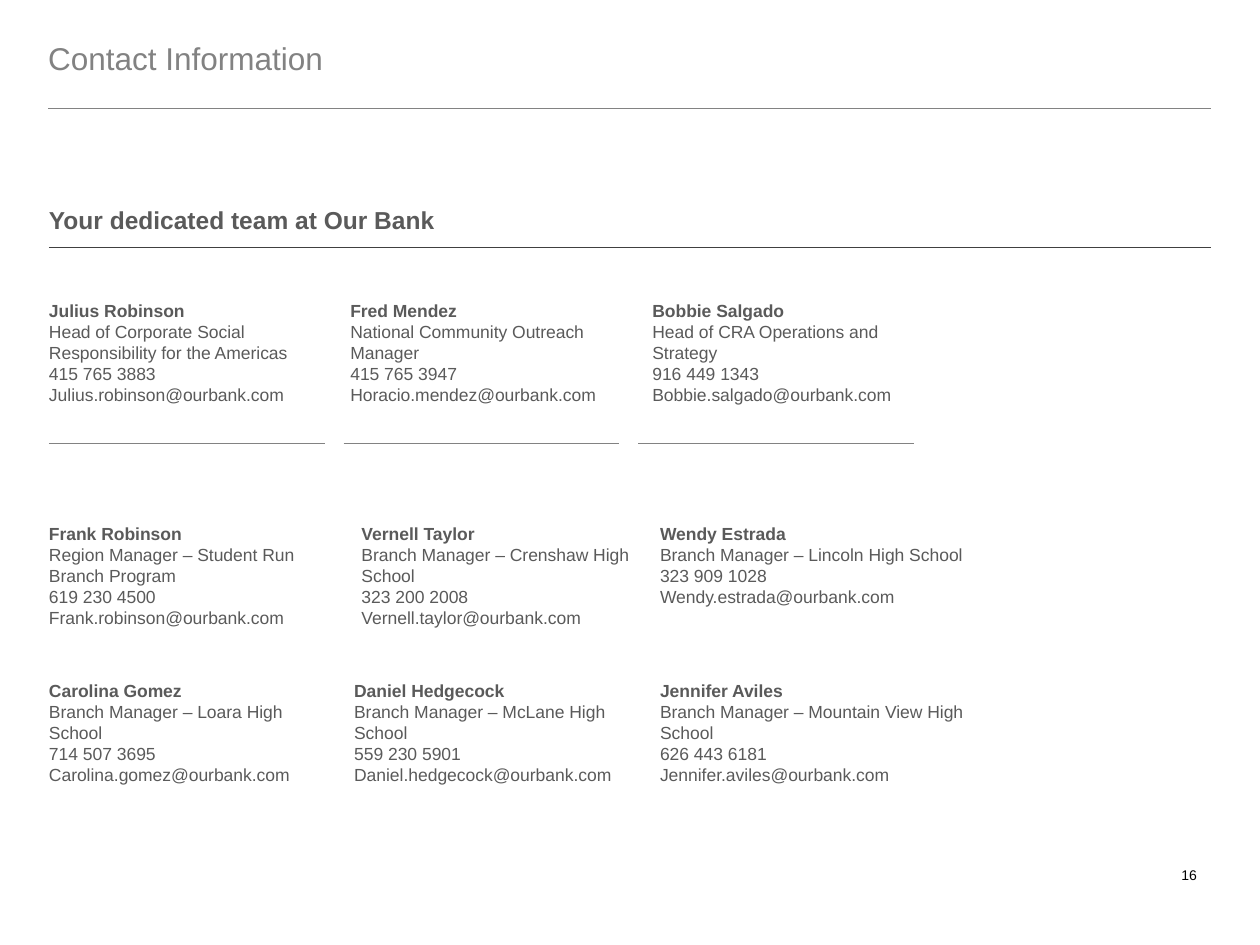
from lxml import etree
from pptx import Presentation
from pptx.dml.color import RGBColor
from pptx.enum.shapes import MSO_CONNECTOR
from pptx.enum.text import MSO_ANCHOR, PP_ALIGN
from pptx.oxml.ns import qn
from pptx.util import Pt

STRAIGHT = MSO_CONNECTOR.STRAIGHT
TOP, MIDDLE = MSO_ANCHOR.TOP, MSO_ANCHOR.MIDDLE
LEFT, RIGHT = PP_ALIGN.LEFT, PP_ALIGN.RIGHT

GREY = RGBColor(0x82, 0x82, 0x82)
DARK = RGBColor(0x5A, 0x5A, 0x5A)
INK = RGBColor(0x40, 0x40, 0x40)
BLACK = RGBColor(0, 0, 0)

TITLE = "Contact Information"
HEADING = "Your dedicated team at Our Bank"
NUMBER = "16"
DOMAIN = "@ourbank.com"

# Each row: top, height, column (left, width) pairs, people
TEAM = [
    (171.4, 67.7, [(28, 161.3), (200.2, 161.3), (372.8, 167.8)], [
        ("Julius Robinson", "Head of Corporate Social Responsibility for the Americas",
         "415 765 3883", "Julius.robinson"),
        ("Fred Mendez", "National Community Outreach Manager",
         "415 765 3947", "Horacio.mendez"),
        ("Bobbie Salgado", "Head of CRA Operations and Strategy",
         "916 449 1343", "Bobbie.salgado"),
    ]),
    (298.8, 74.2, [(28, 167.8), (206.6, 167.8), (377.2, 175.7)], [
        ("Frank Robinson", "Region Manager – Student Run Branch Program",
         "619 230 4500", "Frank.robinson"),
        ("Vernell Taylor", "Branch Manager – Crenshaw High School",
         "323 200 2008", "Vernell.taylor"),
        ("Wendy Estrada", "Branch Manager – Lincoln High School",
         "323 909 1028", "Wendy.estrada"),
    ]),
    (388.8, 74.2, [(28, 163.4), (202.4, 163.4), (377.2, 175.7)], [
        ("Carolina Gomez", "Branch Manager – Loara High School",
         "714 507 3695", "Carolina.gomez"),
        ("Daniel Hedgecock", "Branch Manager – McLane High School",
         "559 230 5901", "Daniel.hedgecock"),
        ("Jennifer Aviles", "Branch Manager – Mountain View High School",
         "626 443 6181", "Jennifer.aviles"),
    ]),
]
EDGE, END = 28, 692
RULE_Y, RULE_W, RULE_STEP = 253.4, 157.7, 168.3


def add_text(slide, lines, x, y, w, h, size=10, color=DARK, bold=0,
             align=LEFT, anchor=TOP, space=None, wrap=True):
    """Add a text box whose first `bold` lines are bold."""
    frame = slide.shapes.add_textbox(Pt(x), Pt(y), Pt(w), Pt(h)).text_frame
    frame.margin_left = frame.margin_right = 0
    frame.margin_top = frame.margin_bottom = 0
    frame.word_wrap = wrap
    frame.vertical_anchor = anchor
    for i, line in enumerate(lines):
        para = frame.paragraphs[0] if i == 0 else frame.add_paragraph()
        para.alignment = align
        if space:
            para.line_spacing = Pt(space)
        run = para.add_run()
        run.text = line
        font = run.font
        font.name, font.size, font.bold = "Arial", Pt(size), i < bold
        font.color.rgb = color


def add_rule(slide, x, y, end, color=GREY, width=0.5):
    rule = slide.shapes.add_connector(STRAIGHT, Pt(x), Pt(y), Pt(end), Pt(y))
    rule.line.color.rgb = color
    rule.line.width = Pt(width)
    etree.SubElement(rule._element.spPr, qn("a:effectLst"))


def main():
    deck = Presentation()
    deck.slide_width, deck.slide_height = Pt(720), Pt(540)
    slide = deck.slides.add_slide(deck.slide_layouts[6])

    add_rule(slide, 27.5, 62, END, width=0.25)
    add_text(slide, [TITLE], 27.5, 16, 511, 31.7, size=18, color=GREY,
             anchor=MIDDLE, space=24)
    add_text(slide, [NUMBER], 669.6, 495.4, 14.4, 14.4, size=8, color=BLACK,
             align=RIGHT, wrap=False)

    add_rule(slide, EDGE, 141.2, END, color=INK)
    add_text(slide, [HEADING], EDGE, 117.4, END - EDGE, 345, size=14, bold=1)

    for top, height, cols, people in TEAM:
        for (x, w), (name, role, phone, user) in zip(cols, people):
            add_text(slide, [name, role, phone, user + DOMAIN], x, top, w, height,
                     bold=1, space=12)

    for i in range(3):
        x = EDGE + i * RULE_STEP
        add_rule(slide, x, RULE_Y, x + RULE_W)

    deck.save("out.pptx")


if __name__ == "__main__":
    main()
